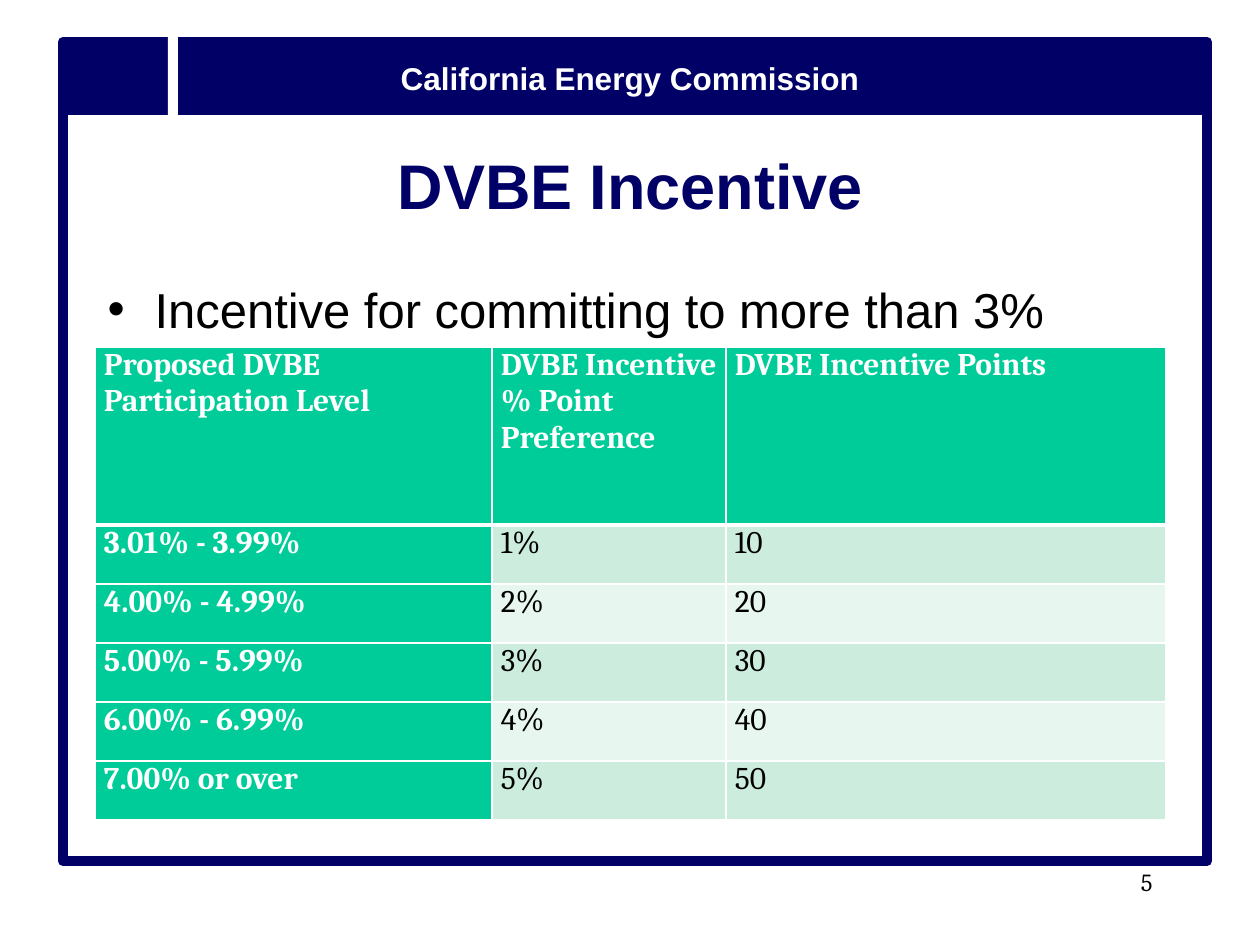
from pptx import Presentation
from pptx import util as u
from pptx.dml.color import RGBColor
from pptx.enum import shapes, text
from pptx.oxml import parse_xml
from pptx.oxml.ns import nsdecls

PX = 914400 / 126
NAVY, GREEN, WHITE, BLACK = "000066", "00CC99", "FFFFFF", "000000"
BANDS = ["CCECDE", "E7F6EF"]


def px(*lengths):
    return [u.Emu(round(n * PX)) for n in lengths]


def write(frame, words, color, align=text.PP_ALIGN.LEFT, **font_format):
    frame.word_wrap = True
    paragraph = frame.paragraphs[0]
    paragraph.alignment = align
    paragraph.space_before = u.Pt(0)
    run = paragraph.add_run()
    run.text = words
    for key, value in font_format.items():
        setattr(run.font, key, value)
    run.font.color.rgb = RGBColor.from_string(color)
    return paragraph


prs = Presentation()
prs.slide_width, prs.slide_height = px(1260, 945)
slide = prs.slides.add_slide(prs.slide_layouts[1])

# Page frame, header band and the white notch in it
for box, fill in [((63, 42, 1144, 819), None),
                  ((63, 42, 1144, 73), NAVY),
                  ((168, 32, 10, 84), WHITE)]:
    panel = slide.shapes.add_shape(shapes.MSO_SHAPE.RECTANGLE, *px(*box))
    panel.shadow.inherit = False
    if fill:
        panel.fill.solid()
        panel.fill.fore_color.rgb = RGBColor.from_string(fill)
        panel.line.fill.background()
    else:
        panel.fill.background()
        panel.line.color.rgb = RGBColor.from_string(NAVY)
        panel.line.width = u.Pt(6)

# Agency name and page number
agency = slide.shapes.add_textbox(*px(63, 53, 1134, 50))
write(agency.text_frame, "California Energy Commission", WHITE, text.PP_ALIGN.CENTER,
      name="Arial", size=u.Pt(18), bold=True)
page_number = slide.shapes.add_textbox(*px(903, 861, 262, 63))
write(page_number.text_frame, "5", BLACK, text.PP_ALIGN.RIGHT, name="Cambria", size=u.Pt(14))

# Title
title = slide.shapes.title
title.left, title.top, title.width, title.height = px(95, 126, 1071, 116)
title.text_frame.auto_size = text.MSO_AUTO_SIZE.NONE
title.text_frame.vertical_anchor = text.MSO_ANCHOR.MIDDLE
write(title.text_frame, "DVBE Incentive", NAVY, text.PP_ALIGN.CENTER,
      name="Arial", size=u.Pt(36), bold=True)

# Bullet list
body = slide.placeholders[1]
body.left, body.top, body.width, body.height = px(95, 273, 1071, 567)
body.fill.solid()
body.fill.fore_color.rgb = RGBColor.from_string(WHITE)
body.text_frame.auto_size = text.MSO_AUTO_SIZE.NONE
bullet = write(body.text_frame, "Incentive for committing to more than 3%", BLACK,
               name="Arial", size=u.Pt(28))
indent = px(47)[0]
bullet_props = bullet._p.get_or_add_pPr()
bullet_props.set("marL", str(indent))
bullet_props.set("indent", str(-indent))
bullet_props.append(parse_xml(f'<a:buChar {nsdecls("a")} char="•"/>'))

# Incentive table
levels = ["3.01% - 3.99%", "4.00% - 4.99%", "5.00% - 5.99%", "6.00% - 6.99%", "7.00% or over"]
rows = [["Proposed DVBE Participation Level", "DVBE Incentive % Point Preference",
         "DVBE Incentive Points"]]
rows += [[level, f"{n}%", f"{n * 10}"] for n, level in enumerate(levels, 1)]
incentives = slide.shapes.add_table(len(rows), 3, *px(95, 347, 1071, 473)).table
for column, width in zip(incentives.columns, px(397, 234, 440)):
    column.width = width
for row, height in zip(incentives.rows, px(178, *[59] * len(levels))):
    row.height = height

cell_format = dict(zip(["margin_left", "margin_top", "margin_right", "margin_bottom"],
                       px(9, 0, 9, 0)))
for r, entries in enumerate(rows):
    for c, entry in enumerate(entries):
        cell = incentives.cell(r, c)
        heading = r == 0 or c == 0
        for key, value in cell_format.items():
            setattr(cell, key, value)
        # Thin white rules, thicker below the heading row
        for side in "LRTB":
            thick = (r, side) in [(0, "B"), (1, "T")]
            cell._tc.get_or_add_tcPr().append(parse_xml(
                f'<a:ln{side} {nsdecls("a")} w="{u.Pt(3 if thick else 1)}"><a:solidFill>'
                f'<a:srgbClr val="{WHITE}"/></a:solidFill></a:ln{side}>'))
        cell.fill.solid()
        cell.fill.fore_color.rgb = RGBColor.from_string(GREEN if heading else BANDS[(r - 1) % 2])
        paragraph = write(cell.text_frame, entry, WHITE if heading else BLACK,
                          name="Cambria", size=u.Pt(18), bold=heading)
        paragraph.space_after = u.Pt(6)

prs.save("out.pptx")
